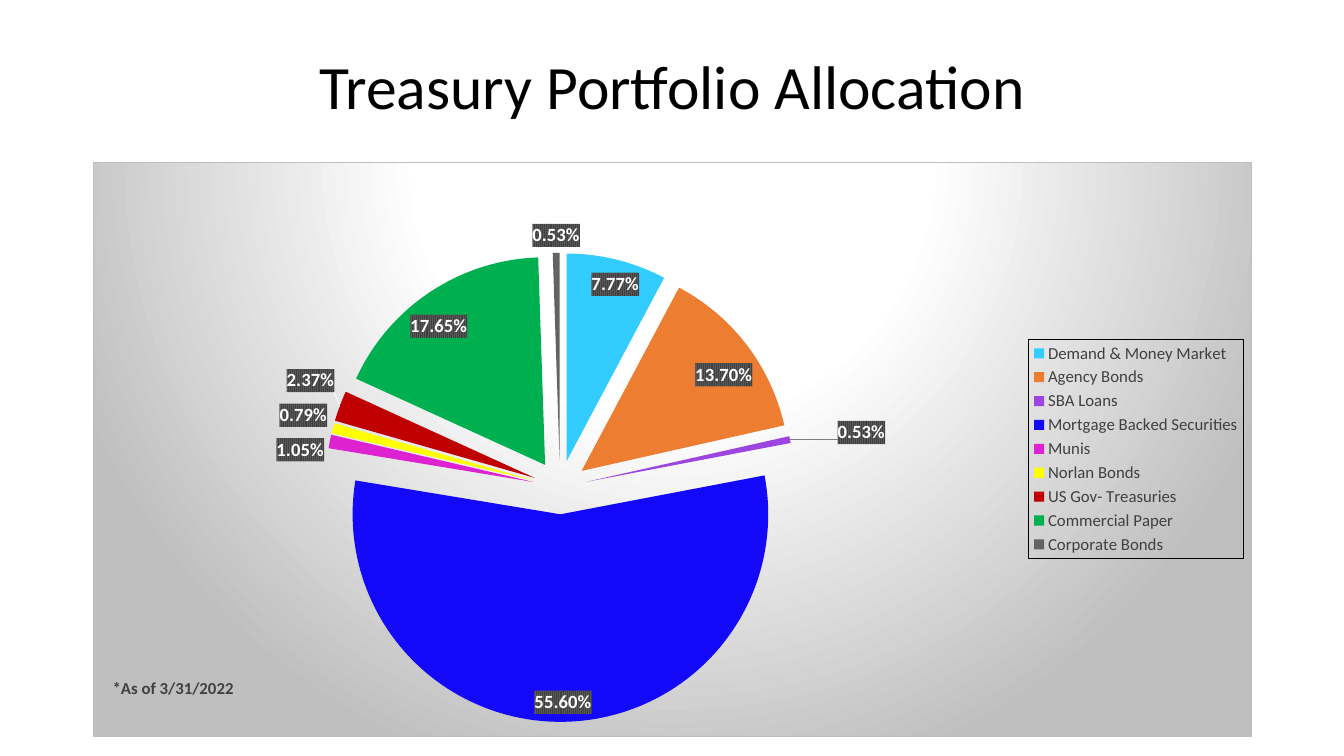
from copy import deepcopy
from lxml.etree import fromstring
from pptx import Presentation
from pptx.chart.data import CategoryChartData
from pptx.dml.color import RGBColor
from pptx.enum.chart import XL_CHART_TYPE, XL_LABEL_POSITION, XL_LEGEND_POSITION
from pptx.enum.text import MSO_ANCHOR, PP_ALIGN
from pptx.oxml.ns import nsdecls, qn
from pptx.util import Inches, Pt

FONT = "Calibri"
HUE = {"ink": "000000", "text": "404040", "white": "FFFFFF", "edge": "BFBFBF",
       "tag": "404040", "stripe": "595959", "lead": "7F7F7F"}
SHARES = [
    ("Demand & Money Market", 7.77, "33CCFF"),
    ("Agency Bonds", 13.7, "ED7D31"),
    ("SBA Loans", 0.53, "9C45E0"),
    ("Mortgage Backed Securities", 55.6, "1308F8"),
    ("Munis", 1.05, "DD23D0"),
    ("Norlan Bonds", 0.79, "FFFF00"),
    ("US Gov- Treasuries", 2.37, "C00000"),
    ("Commercial Paper", 17.65, "00B050"),
    ("Corporate Bonds", 0.53, "636363"),
]


def node(xml):
    """Parse a chart element, adding the namespaces it needs."""
    head, rest = xml.split(">", 1)
    return fromstring(f"{head} {nsdecls('c', 'a')}>{rest}")


def color(hue):
    """Return the XML of a colour."""
    return f'<a:srgbClr val="{hue}"/>'


def line(hue):
    """Return the XML of a thin solid line."""
    return f'<a:ln w="9525"><a:solidFill>{color(hue)}</a:solidFill></a:ln>'


def style(font, size, hue, bold=False):
    """Set the face, size, colour and weight of a font."""
    font.name, font.size, font.bold = FONT, Pt(size), bold
    font.color.rgb = RGBColor.from_string(hue)


def place(part, slot, **spots):
    """Give a chart part a manual layout with the given fractions."""
    for old in part.findall(qn("c:layout")):
        part.remove(old)
    modes = "".join(f'<c:{key}Mode val="edge"/>' for key in "xy") if part.tag != qn("c:dLbl") else ""
    sizes = "".join(f'<c:{key} val="{val}"/>' for key, val in spots.items())
    inner = '<c:layoutTarget val="inner"/>' if part.tag == qn("c:plotArea") else ""
    part.insert(slot, node(f"<c:layout><c:manualLayout>{inner}{modes}{sizes}"
                           "</c:manualLayout></c:layout>"))


def add_title(slide, left, top, width, height):
    """Write the centred slide title in its box."""
    frame = slide.shapes.add_textbox(left, top, width, height).text_frame
    frame.word_wrap = True
    frame.vertical_anchor = MSO_ANCHOR.MIDDLE
    para = frame.paragraphs[0]
    para.alignment, para.line_spacing = PP_ALIGN.CENTER, 0.9
    run = para.add_run()
    run.text = "Treasury Portfolio Allocation"
    style(run.font, 44, HUE["ink"])


def add_tags(series):
    """Label the slices and pull the SBA Loans label away from the pie."""
    tags = series.data_labels
    tags.show_value = True
    tags.number_format, tags.number_format_is_linked = '0.00"%"', False
    tags.position = XL_LABEL_POSITION.BEST_FIT
    style(tags.font, 13.3, HUE["white"], True)
    root = series._element.find(qn("c:dLbls"))
    root.find(qn("c:txPr")).addprevious(node(
        f'<c:spPr><a:pattFill prst="narVert"><a:fgClr>{color(HUE["tag"])}</a:fgClr>'
        f'<a:bgClr>{color(HUE["stripe"])}</a:bgClr></a:pattFill></c:spPr>'))
    tag = node('<c:dLbl><c:idx val="2"/></c:dLbl>')
    tag.extend(deepcopy(kid) for kid in root if kid.tag != qn("c:showLeaderLines"))
    place(tag, 1, x=0.036, y=0.01)
    root.insert(0, tag)
    root.append(node(f"<c:leaderLines><c:spPr>{line(HUE['lead'])}</c:spPr></c:leaderLines>"))


def add_pie(slide, left, top, width, height):
    """Draw the exploded allocation pie with its legend and date."""
    data = CategoryChartData()
    data.categories = [name for name, _, _ in SHARES]
    data.add_series("Series 1", [share for _, share, _ in SHARES])
    chart = slide.shapes.add_chart(XL_CHART_TYPE.PIE, left, top, width, height, data).chart
    style(chart.font, 10, HUE["ink"])
    plot = chart.plots[0]
    plot.vary_by_categories = True
    series = plot.series[0]
    for spot, (_, _, hue) in enumerate(SHARES):
        fill = series.points[spot].format.fill
        fill.solid()
        fill.fore_color.rgb = RGBColor.from_string(hue)
    series._element.find(qn("c:dPt")).addprevious(node('<c:explosion val="13"></c:explosion>'))
    add_tags(series)

    chart.has_title = True
    run = chart.chart_title.text_frame.paragraphs[0].add_run()
    run.text = "*As of 3/31/2022"
    style(run.font, 12, HUE["text"], True)
    chart.has_legend = True
    chart.legend.position = XL_LEGEND_POSITION.RIGHT
    chart.legend.include_in_layout = False
    style(chart.legend.font, 12, HUE["text"])

    root = chart._chartSpace.find(qn("c:chart"))
    legend = root.find(qn("c:legend"))
    place(root.find(qn("c:title")), 1, x=0.014, y=0.89)
    place(root.find(qn("c:plotArea")), 0, x=0.2, y=0.157, w=0.406, h=0.818)
    place(legend, 1, x=0.807, y=0.308, w=0.186, h=0.382)
    legend.find(qn("c:txPr")).addprevious(node(f"<c:spPr>{line(HUE['ink'])}</c:spPr>"))
    stops = [(0, "white"), (39, "white"), (100, "edge")]
    shades = "".join(f'<a:gs pos="{at * 1000}">{color(HUE[key])}</a:gs>' for at, key in stops)
    root.addnext(node(
        f'<c:spPr><a:gradFill><a:gsLst>{shades}</a:gsLst><a:path path="circle">'
        '<a:fillToRect l="50000" t="-80000" r="50000" b="180000"/></a:path></a:gradFill>'
        f"{line(HUE['edge'])}</c:spPr>"))


def main():
    """Build the slide and save it."""
    deck = Presentation()
    deck.slide_width, deck.slide_height = Inches(13.33), Inches(7.5)
    slide = deck.slides.add_slide(deck.slide_layouts[6])
    add_title(slide, Inches(0.92), Inches(0.16), Inches(11.5), Inches(1.45))
    add_pie(slide, Inches(0.92), Inches(1.61), Inches(11.5), Inches(5.7))
    deck.save("out.pptx")


if __name__ == "__main__":
    main()
